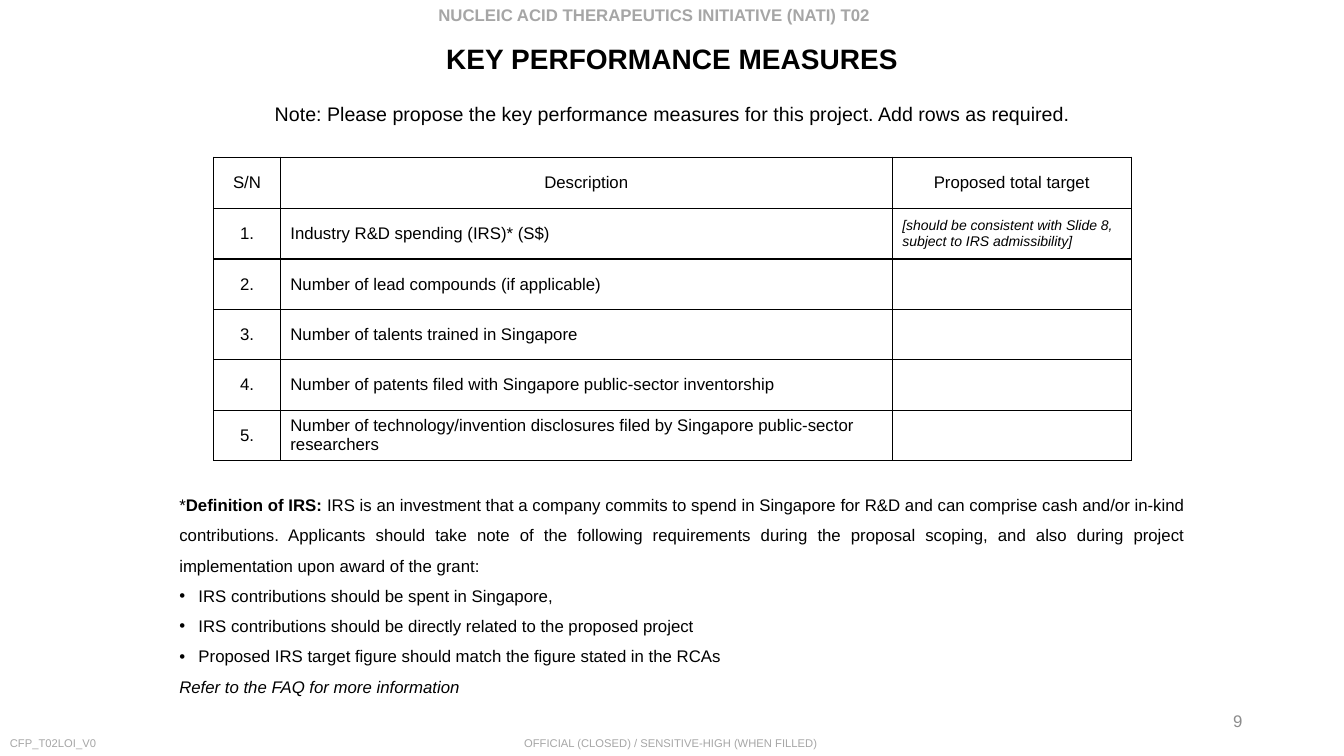
from lxml.etree import SubElement
from pptx import Presentation
from pptx.dml.color import RGBColor
from pptx.enum.text import MSO_ANCHOR, MSO_AUTO_SIZE, PP_ALIGN
from pptx.oxml.ns import qn
from pptx.util import Inches, Pt

COLORS = {"text": "000000", "muted": "A6A6A6", "number": "8C8C8C", "border": "000000"}


def write(p, text, size=12, color="text", bold=False, italic=False, align=PP_ALIGN.LEFT):
    """Add one formatted run to paragraph p."""
    p.alignment = align
    r = p.add_run()
    r.text = text
    r.font.name = "Arial"
    r.font.size = Pt(size)
    r.font.bold = bold
    r.font.italic = italic
    r.font.color.rgb = RGBColor.from_string(COLORS[color])


def add_text_frame(left, top, width, height, anchor=MSO_ANCHOR.TOP, wrap=True):
    box = s.shapes.add_textbox(Inches(left), Inches(top), Inches(width), Inches(height))
    tf = box.text_frame
    tf.word_wrap = wrap
    tf.vertical_anchor = anchor
    return tf


prs = Presentation()
prs.slide_width = Inches(13.33)
prs.slide_height = Inches(7.5)
s = prs.slides.add_slide(prs.slide_layouts[5])

# Header and footer
tf = add_text_frame(5.1, 7.26, 3.14, 0.24, wrap=False)
write(tf.paragraphs[0], "OFFICIAL (CLOSED) / SENSITIVE-HIGH (WHEN FILLED)", size=8, color="muted")
tf = add_text_frame(0, 7.26, 5, 0.24)
write(tf.paragraphs[0], "CFP_T02LOI_V0", size=8, color="muted")
tf = add_text_frame(4.25, 0, 4.84, 0.3)
write(tf.paragraphs[0], "NUCLEIC ACID THERAPEUTICS INITIATIVE (NATI) T02", color="muted", bold=True)
tf = add_text_frame(9.42, 6.95, 3, 0.4, MSO_ANCHOR.MIDDLE)
write(tf.paragraphs[0], "9", color="number", align=PP_ALIGN.RIGHT)

# Title and note
title = s.shapes.title
title.left, title.top = Inches(0.99), Inches(0.36)
title.width, title.height = Inches(11.35), Inches(0.6)
tf = title.text_frame
tf.auto_size = MSO_AUTO_SIZE.NONE
tf.vertical_anchor = MSO_ANCHOR.TOP
write(tf.paragraphs[0], "KEY PERFORMANCE MEASURES", size=20, bold=True, align=PP_ALIGN.CENTER)
tf = add_text_frame(0.56, 0.96, 12.22, 0.34)
write(tf.paragraphs[0],
      "Note: Please propose the key performance measures for this project. Add rows as required.",
      size=14, align=PP_ALIGN.CENTER)

# Table of measures
measures = [
    ("Industry R&D spending (IRS)* (S$)",
     "[should be consistent with Slide 8, subject to IRS admissibility]"),
    ("Number of lead compounds (if applicable)", ""),
    ("Number of talents trained in Singapore", ""),
    ("Number of patents filed with Singapore public-sector inventorship", ""),
    ("Number of technology/invention disclosures filed by Singapore public-sector researchers", ""),
]
rows = [("S/N", "Description", "Proposed total target")]
rows += [(f"{n}.", *measure) for n, measure in enumerate(measures, 1)]
table = s.shapes.add_table(len(rows), 3, Inches(2.12), Inches(1.56), Inches(9.1), Inches(3.01)).table
table.first_row = table.horz_banding = False
for column, width in zip(table.columns, (0.66, 6.07, 2.37)):
    column.width = Inches(width)
for i, row in enumerate(rows):
    table.rows[i].height = Inches(0.5 if i else 0.51)
    for j, text in enumerate(row):
        cell = table.cell(i, j)
        cell.vertical_anchor = MSO_ANCHOR.MIDDLE
        if text:
            is_hint = i > 0 and j == 2
            centred = i == 0 or j == 0
            write(cell.text_frame.paragraphs[0], text, size=10 if is_hint else 12, italic=is_hint,
                  align=PP_ALIGN.CENTER if centred else PP_ALIGN.LEFT)
        tcPr = cell._tc.get_or_add_tcPr()
        for side in ("a:lnL", "a:lnR", "a:lnT", "a:lnB"):
            ln = SubElement(tcPr, qn(side), w=str(Pt(1)))
            SubElement(SubElement(ln, qn("a:solidFill")), qn("a:srgbClr"), val=COLORS["border"])
        cell.fill.background()

# Definition of IRS
tf = add_text_frame(1.68, 4.77, 10.18, 2.18, MSO_ANCHOR.MIDDLE)
p = tf.paragraphs[0]
write(p, "*", align=PP_ALIGN.JUSTIFY)
write(p, "Definition of IRS: ", bold=True, align=PP_ALIGN.JUSTIFY)
write(p, "IRS is an investment that a company commits to spend in Singapore for R&D and can comprise "
         "cash and/or in-kind contributions. Applicants should take note of the following requirements "
         "during the proposal scoping, and also during project implementation upon award of the grant:",
      align=PP_ALIGN.JUSTIFY)
for requirement in (
    "IRS contributions should be spent in Singapore,",
    "IRS contributions should be directly related to the proposed project",
    "Proposed IRS target figure should match the figure stated in the RCAs",
):
    p = tf.add_paragraph()
    write(p, requirement, align=PP_ALIGN.JUSTIFY)
    pPr = p._p.get_or_add_pPr()
    pPr.set("marL", str(Inches(0.19)))
    pPr.set("indent", str(-Inches(0.19)))
    SubElement(pPr, qn("a:buFont"), typeface="Arial")
    SubElement(pPr, qn("a:buChar"), char="•")
write(tf.add_paragraph(), "Refer to the FAQ for more information", italic=True, align=PP_ALIGN.JUSTIFY)
for p in tf.paragraphs:
    p.line_spacing = 1.5

prs.save("out.pptx")
